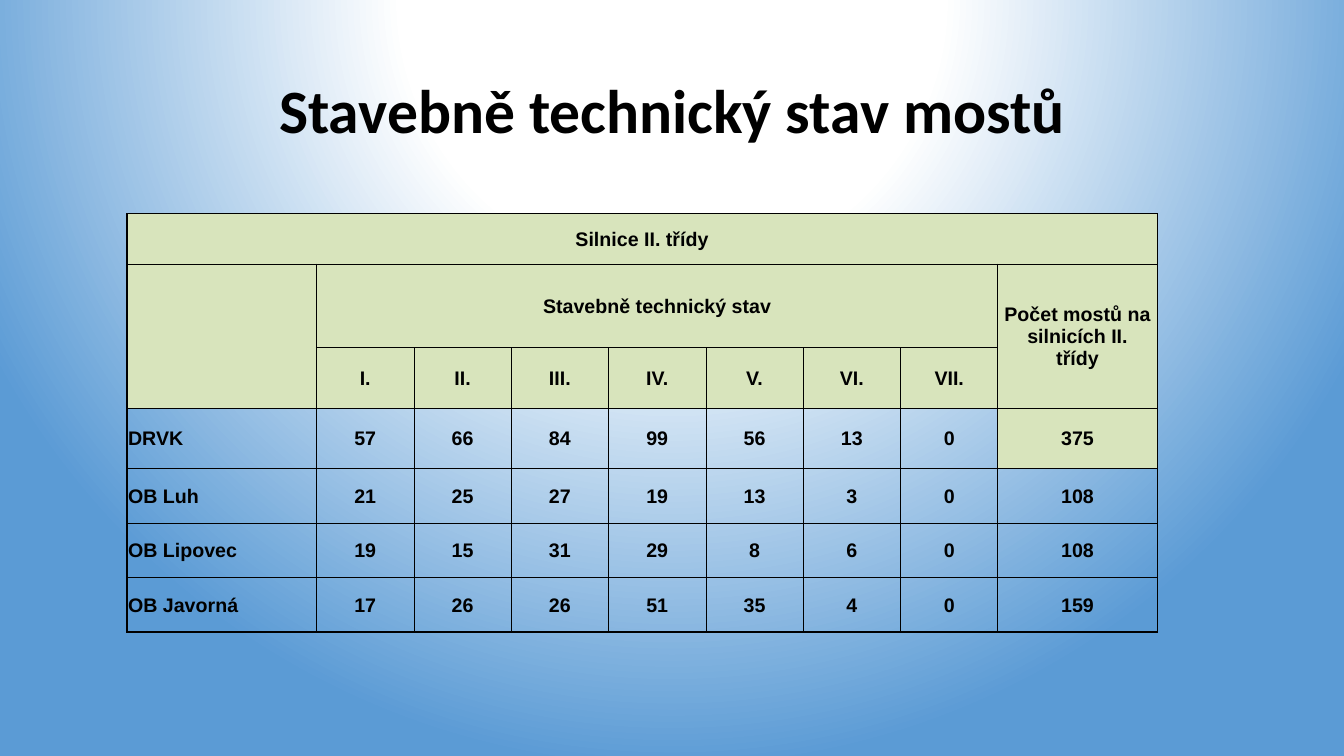
from lxml import etree
from pptx import Presentation
from pptx.dml.color import RGBColor
from pptx.enum.text import MSO_ANCHOR, PP_ALIGN
from pptx.oxml import parse_xml
from pptx.oxml.ns import qn
from pptx.util import Inches, Pt

MIDDLE = MSO_ANCHOR.MIDDLE
LEFT, CENTER = PP_ALIGN.LEFT, PP_ALIGN.CENTER
COLORS = {"ink": "000000", "header": "D8E4BC", "glow": "FFFFFF", "sky": "5B9BD5"}

TABLE_WIDTH = 10.22
LABEL_WIDTH, TOTAL_WIDTH = 1.88, 1.58
GRADES = ["I.", "II.", "III.", "IV.", "V.", "VI.", "VII."]
GRADE_WIDTH = (TABLE_WIDTH - LABEL_WIDTH - TOTAL_WIDTH) / len(GRADES)
COLUMN_WIDTHS = [LABEL_WIDTH] + [GRADE_WIDTH] * len(GRADES) + [TOTAL_WIDTH]
ROW_HEIGHTS = [0.5, 0.83, 0.6, 0.6, 0.54, 0.54, 0.54]
HEADER_ROWS = 3
SUMMARY_ROW = 3
TOTAL_COLUMN = 8
HEAVY_COLUMN_EDGES = {0, 1, 8, 9}
HEAVY_ROW_EDGES = {0, 1, 3, 4, 7}
MERGES = [(0, 0, 0, 8), (1, 0, 2, 0), (1, 1, 1, 7), (1, 8, 2, 8)]
HEADERS = {
    (0, 0): "Silnice II. třídy",
    (1, 1): "Stavebně technický stav",
    (1, 8): "Počet mostů na silnicích II.\vtřídy",
}
BRIDGES = [
    ("DRVK", 57, 66, 84, 99, 56, 13, 0, 375),
    ("OB Luh", 21, 25, 27, 19, 13, 3, 0, 108),
    ("OB Lipovec", 19, 15, 31, 29, 8, 6, 0, 108),
    ("OB Javorná", 17, 26, 26, 51, 35, 4, 0, 159),
]


def paint_background(slide):
    fill = slide.background.fill
    fill.gradient()
    stops = "".join(
        f'<a:gs pos="{share * 1000}"><a:srgbClr val="{COLORS[name]}"/></a:gs>'
        for share, name in [(0, "glow"), (35, "glow"), (100, "sky")]
    )
    gradient = parse_xml(
        '<a:gradFill xmlns:a="http://schemas.openxmlformats.org/drawingml/2006/main" '
        f'rotWithShape="1"><a:gsLst>{stops}</a:gsLst><a:path path="circle">'
        '<a:fillToRect l="50000" t="-80000" r="50000" b="180000"/></a:path></a:gradFill>'
    )
    background = slide.background._cSld.bg.bgPr
    background.replace(background.find(qn("a:gradFill")), gradient)


def style_paragraph(paragraph, font_name, size, alignment):
    paragraph.alignment = alignment
    font = paragraph.font
    font.name, font.size, font.bold = font_name, Pt(size), True
    font.color.rgb = RGBColor.from_string(COLORS["ink"])


def add_title(slide, text):
    box = slide.shapes.add_textbox(Inches(0.92), Inches(0.4), Inches(11.5), Inches(1.45))
    frame = box.text_frame
    frame.word_wrap = True
    frame.vertical_anchor = MIDDLE
    frame.text = text
    paragraph = frame.paragraphs[0]
    paragraph.line_spacing = 0.9
    style_paragraph(paragraph, "Calibri", 44, CENTER)


def draw_borders(cell, row, column):
    properties = cell._tc.get_or_add_tcPr()
    edges = [
        ("a:lnL", column in HEAVY_COLUMN_EDGES),
        ("a:lnR", column + cell.span_width in HEAVY_COLUMN_EDGES),
        ("a:lnT", row in HEAVY_ROW_EDGES),
        ("a:lnB", row + cell.span_height in HEAVY_ROW_EDGES),
    ]
    for tag, heavy in edges:
        line = etree.SubElement(properties, qn(tag), w=str(Pt(1 if heavy else 0.5)))
        solid = etree.SubElement(line, qn("a:solidFill"))
        etree.SubElement(solid, qn("a:srgbClr"), val=COLORS["ink"])


def format_cell(cell, row, column, text):
    cell.text = text
    cell.vertical_anchor = MIDDLE
    cell.margin_left = cell.margin_right = cell.margin_top = Inches(0.01)
    cell.margin_bottom = 0
    is_label = column == 0 and row >= HEADER_ROWS
    style_paragraph(cell.text_frame.paragraphs[0], "Arial", 14, LEFT if is_label else CENTER)
    draw_borders(cell, row, column)
    if row < HEADER_ROWS or (row, column) == (SUMMARY_ROW, TOTAL_COLUMN):
        cell.fill.solid()
        cell.fill.fore_color.rgb = RGBColor.from_string(COLORS["header"])
    else:
        cell.fill.background()


def cell_text(row, column):
    if row >= HEADER_ROWS:
        return str(BRIDGES[row - HEADER_ROWS][column])
    if row == HEADER_ROWS - 1:
        return GRADES[column - 1]
    return HEADERS.get((row, column), "")


def add_bridge_table(slide):
    table = slide.shapes.add_table(
        len(ROW_HEIGHTS), len(COLUMN_WIDTHS), Inches(1.26), Inches(2.12),
        Inches(TABLE_WIDTH), Inches(sum(ROW_HEIGHTS)),
    ).table
    table.first_row = table.horz_banding = False
    for column, width in zip(table.columns, COLUMN_WIDTHS):
        column.width = Inches(width)
    for row, height in zip(table.rows, ROW_HEIGHTS):
        row.height = Inches(height)
    for top, left, bottom, right in MERGES:
        table.cell(top, left).merge(table.cell(bottom, right))
    for row in range(len(ROW_HEIGHTS)):
        for column in range(len(COLUMN_WIDTHS)):
            cell = table.cell(row, column)
            if not cell.is_spanned:
                format_cell(cell, row, column, cell_text(row, column))


def main():
    presentation = Presentation()
    presentation.slide_width = Inches(13.33)
    presentation.slide_height = Inches(7.5)
    slide = presentation.slides.add_slide(presentation.slide_layouts[6])
    paint_background(slide)
    add_title(slide, "Stavebně technický stav mostů")
    add_bridge_table(slide)
    presentation.save("out.pptx")


if __name__ == "__main__":
    main()
